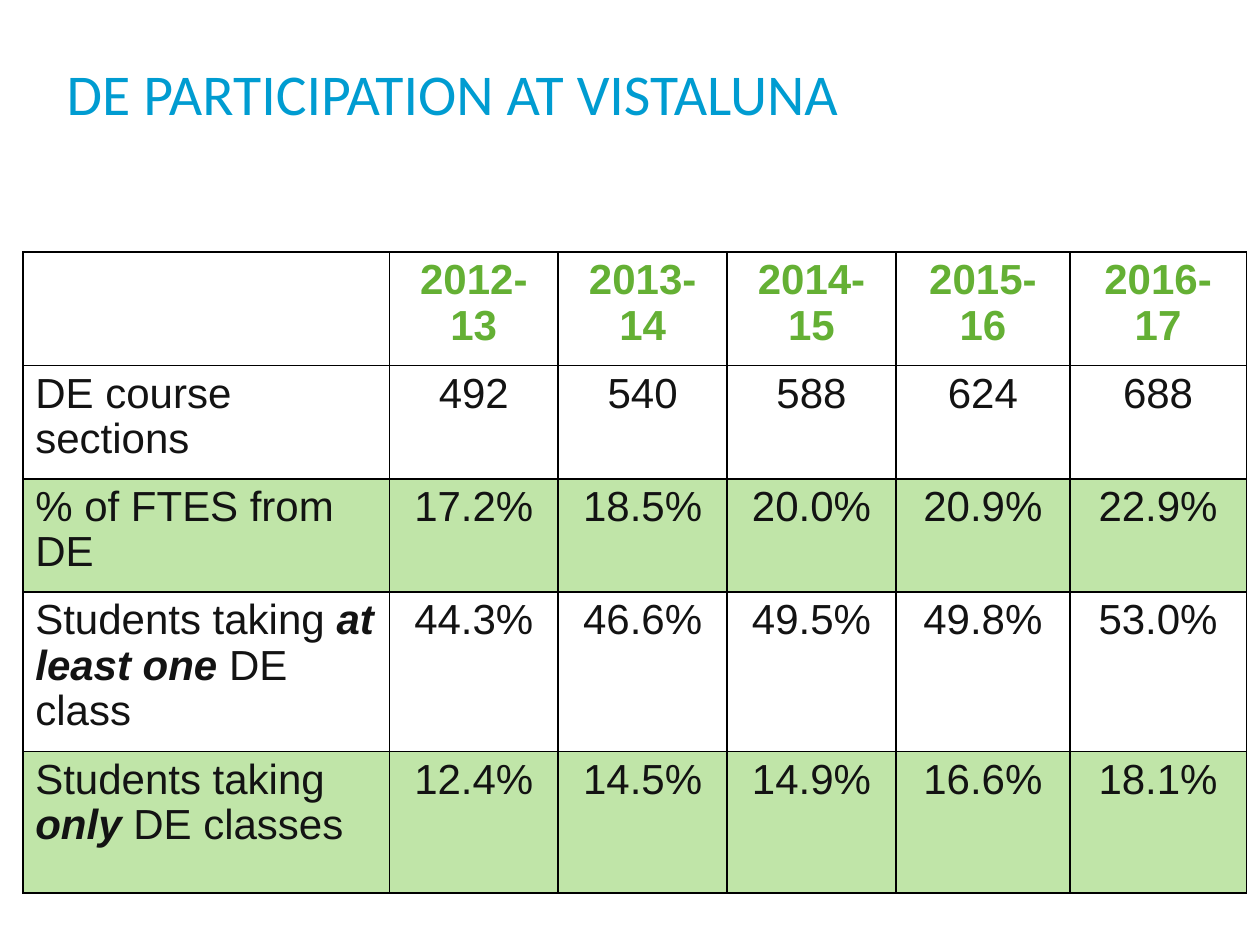
import pptx
import pptx.dml.color
import pptx.enum.text
import pptx.oxml
import pptx.oxml.ns
import pptx.util
from typing import NamedTuple

Pt = pptx.util.Pt
PP_ALIGN = pptx.enum.text.PP_ALIGN

COLORS = {
    "title": "009CD1",
    "header": "64B034",
    "body": "131313",
    "band": "C0E5A8",
    "plain": "FFFFFF",
    "border": "000000",
}
COLUMN_WIDTHS = (209.5, 96.5, 96.5, 96.5, 99.4, 100.8)
BORDER_SIDES = ("a:lnL", "a:lnR", "a:lnT", "a:lnB")


class Span(NamedTuple):
    text: str
    strong: bool = False  # bold italic


class Row(NamedTuple):
    label: tuple[Span, ...]
    values: tuple[str, ...]
    height: float
    fill: str = "plain"
    header: bool = False


ROWS = (
    Row((), ("2012-13", "2013-14", "2014-15", "2015-16", "2016-17"), 64.8, header=True),
    Row((Span("DE course sections"),), ("492", "540", "588", "624", "688"), 64.8),
    Row((Span("% of FTES from DE"),),
        ("17.2%", "18.5%", "20.0%", "20.9%", "22.9%"), 64.8, "band"),
    Row((Span("Students taking "), Span("at least one", True), Span(" DE class")),
        ("44.3%", "46.6%", "49.5%", "49.8%", "53.0%"), 87.5),
    Row((Span("Students taking "), Span("only", True), Span(" DE classes")),
        ("12.4%", "14.5%", "14.9%", "16.6%", "18.1%"), 80.8, "band"),
)


def rgb(name: str) -> pptx.dml.color.RGBColor:
    return pptx.dml.color.RGBColor.from_string(COLORS[name])


def style_font(font, name: str, size: float, color: str) -> None:
    font.name = name
    font.size = Pt(size)
    font.color.rgb = rgb(color)


def add_borders(cell) -> None:
    properties = cell._tc.get_or_add_tcPr()
    for position, side in enumerate(BORDER_SIDES):
        line = pptx.oxml.parse_xml(
            f'<{side} {pptx.oxml.ns.nsdecls("a")} w="{Pt(1)}"><a:solidFill>'
            f'<a:srgbClr val="{COLORS["border"]}"/></a:solidFill></{side}>')
        properties.insert(position, line)


def fill_cell(cell, spans: tuple[Span, ...], row: Row, align) -> None:
    cell.fill.solid()
    cell.fill.fore_color.rgb = rgb(row.fill)
    add_borders(cell)
    para = cell.text_frame.paragraphs[0]
    para.alignment = align
    para.line_spacing = 0.97
    style_font(para.font, "Arial", 24, "header" if row.header else "body")
    para.font.bold = row.header
    for span in spans:
        run = para.add_run()
        run.text = span.text
        if span.strong:
            run.font.bold = run.font.italic = True


def add_title(slide, text: str) -> None:
    box = slide.shapes.add_textbox(Pt(31), Pt(20.9), Pt(565.2), Pt(59))
    frame = box.text_frame
    frame.word_wrap = True
    frame.vertical_anchor = pptx.enum.text.MSO_ANCHOR.BOTTOM
    frame.margin_left = frame.margin_right = Pt(7.2)
    frame.margin_top = frame.margin_bottom = Pt(7.2)
    para = frame.paragraphs[0]
    para.text = text
    style_font(para.font, "Calibri", 33, "title")


def add_participation_table(slide) -> None:
    frame = slide.shapes.add_table(
        len(ROWS), len(COLUMN_WIDTHS), Pt(13), Pt(144),
        Pt(sum(COLUMN_WIDTHS)), Pt(sum(row.height for row in ROWS)))
    table = frame.table
    for column, width in zip(table.columns, COLUMN_WIDTHS):
        column.width = Pt(width)
    for index, row in enumerate(ROWS):
        table.rows[index].height = Pt(row.height)
        fill_cell(table.cell(index, 0), row.label, row, PP_ALIGN.LEFT)
        for column, value in enumerate(row.values, start=1):
            fill_cell(table.cell(index, column), (Span(value),), row, PP_ALIGN.CENTER)


def main() -> None:
    deck = pptx.Presentation()
    deck.slide_width, deck.slide_height = Pt(720), Pt(540)
    page = deck.slides.add_slide(deck.slide_layouts[6])
    add_title(page, "DE PARTICIPATION AT VISTALUNA")
    add_participation_table(page)
    deck.save("out.pptx")


if __name__ == "__main__":
    main()
